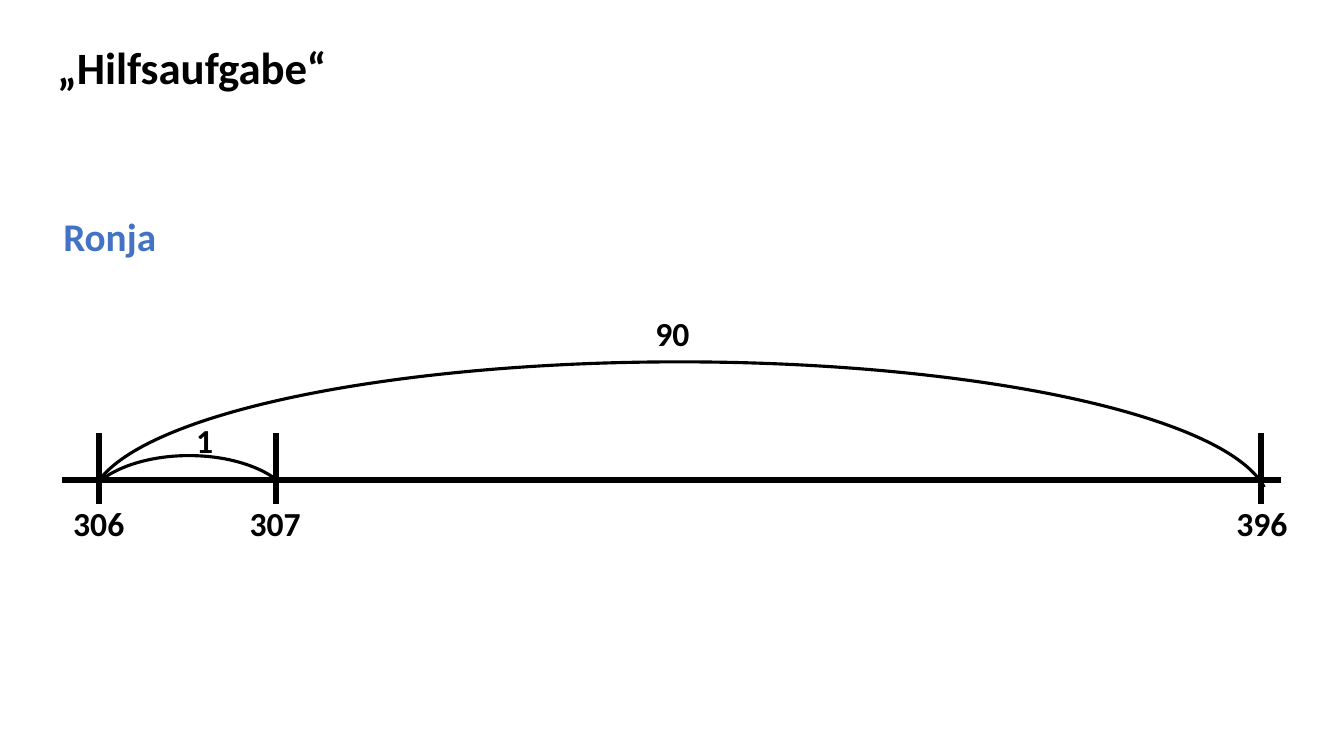
from pptx import Presentation
from pptx.dml.color import RGBColor
from pptx.enum.shapes import MSO_CONNECTOR, MSO_SHAPE
from pptx.enum.text import MSO_AUTO_SIZE, PP_ALIGN
from pptx.oxml.ns import qn
from pptx.util import Inches, Pt
from lxml import etree

BLACK = RGBColor(0x00, 0x00, 0x00)
BLUE = RGBColor(0x44, 0x72, 0xC4)
STRAIGHT = MSO_CONNECTOR.STRAIGHT
ARC = MSO_SHAPE.ARC
LEFT, CENTER = PP_ALIGN.LEFT, PP_ALIGN.CENTER
FIT = MSO_AUTO_SIZE.SHAPE_TO_FIT_TEXT

prs = Presentation()
prs.slide_width = Inches(13.33)
prs.slide_height = Inches(7.5)
s = prs.slides.add_slide(prs.slide_layouts[6])


def add_line(x1, y1, x2, y2):
    line = s.shapes.add_connector(STRAIGHT, Inches(x1), Inches(y1), Inches(x2), Inches(y2))
    line.line.color.rgb = BLACK
    line.line.width = Pt(4.5)
    etree.SubElement(line._element.spPr, qn("a:effectLst"))


def add_text(text, x, y, w, h, size=24, color=BLACK, align=CENTER):
    tf = s.shapes.add_textbox(Inches(x), Inches(y), Inches(w), Inches(h)).text_frame
    tf.word_wrap = True
    tf.auto_size = FIT
    tf.text = text
    p = tf.paragraphs[0]
    p.alignment = align
    font = p.runs[0].font
    font.name = "Calibri"
    font.size = Pt(size)
    font.bold = True
    font.color.rgb = color


add_line(0.62, 4.76, 12.71, 4.76)
for tick_x in (0.98, 2.74, 12.51):
    add_line(tick_x, 4.3, tick_x, 5)

jumps = [
    (0.82, 4.52, 2.11, 1.11, 120.3, 202.54),
    (0.89, 3.59, 11.7, 2.86, 109.52, 214.89),
]
for x, y, w, h, start, end in jumps:
    arc = s.shapes.add_shape(ARC, Inches(x), Inches(y), Inches(w), Inches(h))
    arc.adjustments[0] = start
    arc.adjustments[1] = end
    arc.shadow.inherit = False
    arc.fill.background()
    arc.line.color.rgb = BLACK
    arc.line.width = Pt(2.25)

for number, x, y, w in [
    ("306", 0.61, 4.94, 0.74),
    ("307", 2.37, 4.94, 0.72),
    ("396", 12.13, 4.94, 0.77),
    ("1", 1.6, 4.12, 0.86),
    ("90", 6.24, 3.06, 0.86),
]:
    add_text(number, x, y, w, 0.5)

add_text("„Hilfsaufgabe“", 0.47, 0.34, 3.76, 0.64, 32, BLACK, LEFT)
add_text("Ronja", 0.53, 2.06, 1.35, 0.57, 28, BLUE, LEFT)

prs.save("out.pptx")
